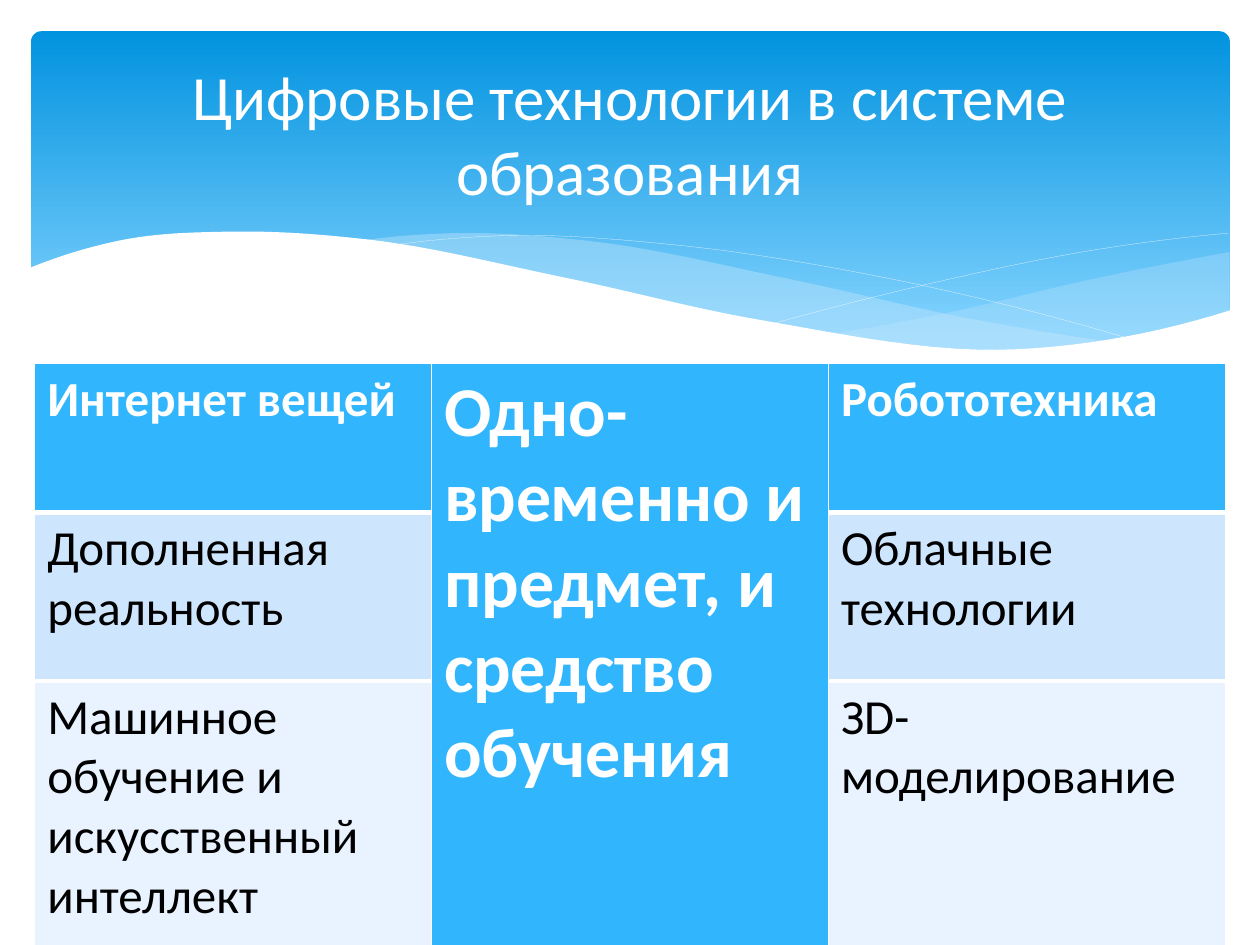
from lxml.etree import SubElement
from pptx import Presentation
from pptx.dml.color import RGBColor
from pptx.enum.shapes import MSO_SHAPE
from pptx.enum.text import MSO_ANCHOR, MSO_AUTO_SIZE, PP_ALIGN
from pptx.oxml import parse_xml
from pptx.oxml.ns import nsdecls, qn
from pptx.util import Cm, Pt

WHITE = RGBColor(0xFF, 0xFF, 0xFF)
BLACK = RGBColor(0x00, 0x00, 0x00)
SKY_TOP = RGBColor(0x02, 0x93, 0xE0)
SKY_BOTTOM = RGBColor(0x83, 0xD3, 0xFE)
WAVE = RGBColor(0xC6, 0xE7, 0xFC)
HEADER = RGBColor(0x31, 0xB6, 0xFD)
BAND_DARK = RGBColor(0xCE, 0xE5, 0xFE)
BAND_LIGHT = RGBColor(0xE8, 0xF3, 0xFF)
FONT = "Calibri"
STEPS = 12

prs = Presentation()
prs.slide_width, prs.slide_height = Cm(25.4), Cm(19.05)
slide = prs.slides.add_slide(prs.slide_layouts[5])
shapes = slide.shapes


def smooth(knots):
    spans = list(zip(knots, knots[1:]))
    secants = [(y1 - y0) / (x1 - x0) for (x0, y0), (x1, y1) in spans]
    widths = [x1 - x0 for (x0, _), (x1, _) in spans]
    slopes = [
        (s0 * w1 + s1 * w0) / (w0 + w1)
        for s0, s1, w0, w1 in zip(secants, secants[1:], widths, widths[1:])
    ]
    slopes = [2 * secants[0] - slopes[0], *slopes, 2 * secants[-1] - slopes[-1]]
    points = [knots[0]]
    for ((x0, y0), (_, y1)), width, m0, m1 in zip(spans, widths, slopes, slopes[1:]):
        for step in range(1, STEPS + 1):
            t = step / STEPS
            blend = t * t * (3 - 2 * t)
            bend = t * (1 - t) * ((1 - t) * m0 - t * m1)
            points.append((x0 + t * width, y0 + blend * (y1 - y0) + bend * width))
    return points


def draw_curve(points, closed):
    corners = [(Cm(x), Cm(y)) for x, y in points]
    builder = shapes.build_freeform(*corners[0])
    builder.add_line_segments(corners[1:], close=closed)
    curve = builder.convert_to_shape()
    curve.shadow.inherit = False
    if closed:
        curve.line.fill.background()
        curve.fill.solid()
    else:
        curve.fill.background()
    return curve


banner = shapes.add_shape(MSO_SHAPE.ROUNDED_RECTANGLE, Cm(0.63), Cm(0.63), Cm(24.16), Cm(6.86))
banner.adjustments[0] = 0.03
banner.shadow.inherit = False
banner.line.fill.background()
banner.fill.gradient()
banner.fill.gradient_angle = 270
for stop, color, position in zip(banner.fill.gradient_stops, (SKY_TOP, SKY_BOTTOM), (0, 0.9)):
    stop.color.rgb = color
    stop.position = position

right_crest = [(16.79, 6.73), (19.13, 6.3), (21.87, 5.66), (24.79, 5.08)]
right_base = [(24.79, 6.27), (22.99, 6.83), (20.4, 7.06), (16.79, 6.73)]
middle_crest = [(7.26, 4.85), (9.17, 4.7), (11.81, 4.85), (15.98, 5.64), (19.69, 6.45), (22.68, 6.93)]
middle_base = [(22.68, 6.93), (20.5, 7.06), (16.51, 6.71), (11.4, 5.64), (7.26, 4.85)]
falling_line = [(7.85, 4.95), (10.19, 4.75), (13.54, 4.93), (17.65, 5.56), (23.04, 6.91)]
rising_line = [(15.57, 6.53), (19, 5.66), (22, 5.05), (24.77, 4.7)]
page_crest = [(0.58, 5.41), (2.41, 4.85), (4.7, 4.67), (7.42, 4.83),
              (11.35, 5.59), (15.32, 6.45), (20.55, 7.04), (24.82, 6.25)]
page_corners = [(24.82, 8.36), (0.58, 8.36)]

for crest, base, opacity in ((right_crest, right_base, 29), (middle_crest, middle_base, 40)):
    wave = draw_curve(smooth(crest) + smooth(base), True)
    wave.fill.fore_color.rgb = WAVE
    tint = wave.element.spPr.find(qn("a:solidFill"))[0]
    SubElement(tint, qn("a:alpha"), val=str(opacity * 1000))

for knots in (falling_line, rising_line):
    thin_line = draw_curve(smooth(knots), False)
    thin_line.line.color.rgb = WHITE
    thin_line.line.width = Pt(0.1)

page_edge = draw_curve(smooth(page_crest) + page_corners, True)
page_edge.fill.fore_color.rgb = WHITE

ROWS = [
    ("Интернет вещей", "Одно-\nвременно и предмет, и средство обучения", "Робототехника"),
    ("Дополненная реальность", "", "Облачные технологии"),
    ("Машинное обучение и искусственный интеллект", "", "ЗD-моделирование"),
]
technologies = shapes.add_table(3, 3, Cm(0.7), Cm(7.33), Cm(24), Cm(10.8)).table
for column in technologies.columns:
    column.width = Cm(8)
for row, height in zip(technologies.rows, (3, 3.4, 4.4)):
    row.height = Cm(height)
technologies.cell(0, 1).merge(technologies.cell(2, 1))

for r, (texts, band) in enumerate(zip(ROWS, (HEADER, BAND_DARK, BAND_LIGHT))):
    for c, text in enumerate(texts):
        cell = technologies.cell(r, c)
        cell.fill.solid()
        cell.fill.fore_color.rgb = HEADER if c == 1 else band
        if cell.is_spanned:
            continue
        cell.text = text
        for paragraph in cell.text_frame.paragraphs:
            paragraph.font.name = FONT
            paragraph.font.size = Pt(40 if c == 1 else 28)
            paragraph.font.bold = r == 0
            paragraph.font.color.rgb = WHITE if r == 0 else BLACK

for r, side in ((0, "lnB"), (1, "lnT")):
    for c in (0, 2):
        header_rule = parse_xml(
            f'<a:{side} {nsdecls("a")} w="{Pt(3)}"><a:solidFill>'
            f'<a:srgbClr val="{WHITE}"/></a:solidFill></a:{side}>')
        technologies.cell(r, c).fill
        technologies.rows[r].cells[c]._tc.get_or_add_tcPr().insert(0, header_rule)

title = shapes.title
title.left, title.top, title.width, title.height = Cm(1.27), Cm(0.94), Cm(22.86), Cm(3.48)
title.text = "Цифровые технологии в системе образования"
title.text_frame.auto_size = MSO_AUTO_SIZE.NONE
title.text_frame.vertical_anchor = MSO_ANCHOR.MIDDLE
heading = title.text_frame.paragraphs[0]
heading.alignment = PP_ALIGN.CENTER
heading.font.name = FONT
heading.font.size = Pt(36)
heading.font.color.rgb = WHITE
shapes.element.append(title.element)

prs.save("out.pptx")
